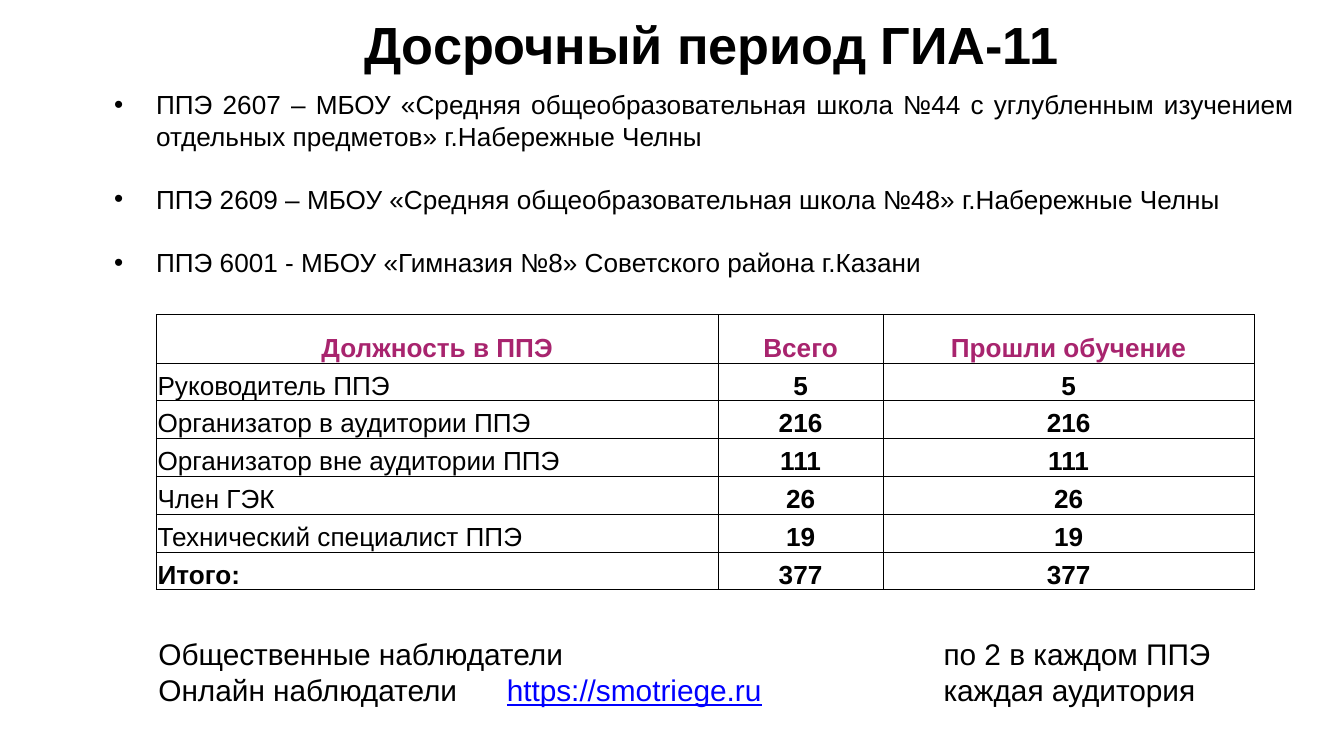
"""Build the slide on the early exam period with its sites, staff table and observers."""
from dataclasses import dataclass

from lxml import etree
from pptx import Presentation
from pptx.dml.color import RGBColor
from pptx.enum.text import MSO_ANCHOR, PP_ALIGN
from pptx.oxml.ns import qn
from pptx.slide import Slide
from pptx.text.text import TextFrame
from pptx.util import Pt

LEFT, CENTER, JUSTIFY = PP_ALIGN.LEFT, PP_ALIGN.CENTER, PP_ALIGN.JUSTIFY
BOTTOM = MSO_ANCHOR.BOTTOM


@dataclass(frozen=True)
class Theme:
    font: str = "Arial"
    text: RGBColor = RGBColor(0x00, 0x00, 0x00)
    header: RGBColor = RGBColor(0xA8, 0x24, 0x6E)
    link: RGBColor = RGBColor(0x00, 0x00, 0xFF)
    border: str = "000000"
    title_size: float = 28
    body_size: float = 14
    note_size: float = 16


@dataclass(frozen=True)
class Box:
    left: float
    top: float
    width: float
    height: float


@dataclass(frozen=True)
class StaffRow:
    position: str
    total: str
    trained: str


THEME = Theme()
TITLE_BOX = Box(48, 3, 666, 41)
SITES_BOX = Box(54, 44, 646.5, 108.5)
TABLE_BOX = Box(83.7, 168.5, 588.2, 147.6)
NOTES_BOX = Box(77.8, 337, 607, 46)

SITES = (
    "ППЭ 2607 – МБОУ «Средняя общеобразовательная школа №44 с углубленным изучением "
    "отдельных предметов» г.Набережные Челны",
    "ППЭ 2609 – МБОУ «Средняя общеобразовательная школа №48» г.Набережные Челны",
    "ППЭ 6001 - МБОУ «Гимназия №8» Советского района г.Казани",
)
SITE_INDENT = 22.5
SITE_GAP = 17

STAFF = (
    StaffRow("Должность в ППЭ", "Всего", "Прошли обучение"),
    StaffRow("Руководитель ППЭ", "5", "5"),
    StaffRow("Организатор в аудитории ППЭ", "216", "216"),
    StaffRow("Организатор вне аудитории ППЭ", "111", "111"),
    StaffRow("Член ГЭК", "26", "26"),
    StaffRow("Технический специалист ППЭ", "19", "19"),
    StaffRow("Итого:", "377", "377"),
)
COLUMN_WIDTHS = (301, 88.4, 198.8)
HEADER_HEIGHT = 26
CELL_MARGIN = 0.7
BORDER_WIDTH = 0.5

LINK = "https://smotriege.ru"
NOTES = (
    ("Общественные наблюдатели", "\tпо 2 в каждом ППЭ"),
    ("Онлайн наблюдатели\t", LINK, "\tкаждая аудитория"),
)
NOTE_TABS = (186.6, 420.6)


def add_text_frame(slide: Slide, box: Box) -> TextFrame:
    shape = slide.shapes.add_textbox(Pt(box.left), Pt(box.top), Pt(box.width), Pt(box.height))
    shape.text_frame.word_wrap = True
    return shape.text_frame


def next_paragraph(frame: TextFrame, index: int):
    return frame.add_paragraph() if index else frame.paragraphs[0]


def set_font(paragraph, size: float, color: RGBColor = THEME.text, bold: bool = False) -> None:
    font = paragraph.font
    font.name, font.size, font.bold = THEME.font, Pt(size), bold
    font.color.rgb = color


def add_title(slide: Slide) -> None:
    paragraph = add_text_frame(slide, TITLE_BOX).paragraphs[0]
    paragraph.text = "Досрочный период ГИА-11"
    paragraph.alignment = CENTER
    set_font(paragraph, THEME.title_size, bold=True)


def add_sites(slide: Slide) -> None:
    frame = add_text_frame(slide, SITES_BOX)
    for index, site in enumerate(SITES):
        paragraph = next_paragraph(frame, index)
        paragraph.text = site
        paragraph.alignment = JUSTIFY
        properties = paragraph._p.get_or_add_pPr()
        properties.set("marL", str(Pt(SITE_INDENT)))
        properties.set("indent", str(-Pt(SITE_INDENT)))
        etree.SubElement(properties, qn("a:buFont"), typeface=THEME.font)
        etree.SubElement(properties, qn("a:buChar"), char="•")
        if index:
            paragraph.space_before = Pt(SITE_GAP)
        set_font(paragraph, THEME.body_size)


def set_borders(cell) -> None:
    properties = cell._tc.get_or_add_tcPr()
    for position, side in enumerate(("lnL", "lnR", "lnT", "lnB")):
        line = etree.Element(qn(f"a:{side}"), w=str(Pt(BORDER_WIDTH)))
        fill = etree.SubElement(line, qn("a:solidFill"))
        etree.SubElement(fill, qn("a:srgbClr"), val=THEME.border)
        properties.insert(position, line)


def fill_cell(cell, text: str, alignment: PP_ALIGN, color: RGBColor, bold: bool) -> None:
    cell.fill.background()
    set_borders(cell)
    cell.vertical_anchor = BOTTOM
    cell.margin_left = cell.margin_right = cell.margin_top = Pt(CELL_MARGIN)
    cell.margin_bottom = Pt(0)
    paragraph = cell.text_frame.paragraphs[0]
    paragraph.text = text
    paragraph.alignment = alignment
    set_font(paragraph, THEME.body_size, color, bold)


def add_staff_table(slide: Slide) -> None:
    box = TABLE_BOX
    table = slide.shapes.add_table(
        len(STAFF), len(COLUMN_WIDTHS), Pt(box.left), Pt(box.top), Pt(box.width), Pt(box.height)
    ).table
    table.first_row = table.horz_banding = False
    for column, width in zip(table.columns, COLUMN_WIDTHS):
        column.width = Pt(width)
    last = len(STAFF) - 1
    row_height = (box.height - HEADER_HEIGHT) / last
    for row, staff in enumerate(STAFF):
        table.rows[row].height = Pt(row_height if row else HEADER_HEIGHT)
        color = THEME.text if row else THEME.header
        for column, text in enumerate((staff.position, staff.total, staff.trained)):
            is_label = column == 0 and row > 0
            bold = not is_label or row == last
            fill_cell(table.cell(row, column), text, LEFT if is_label else CENTER, color, bold)


def add_notes(slide: Slide) -> None:
    frame = add_text_frame(slide, NOTES_BOX)
    for index, parts in enumerate(NOTES):
        paragraph = next_paragraph(frame, index)
        tabs = etree.SubElement(paragraph._p.get_or_add_pPr(), qn("a:tabLst"))
        for stop in NOTE_TABS:
            etree.SubElement(tabs, qn("a:tab"), pos=str(Pt(stop)), algn="l")
        set_font(paragraph, THEME.note_size)
        for part in parts:
            run = paragraph.add_run()
            run.text = part
            if part == LINK:
                run.font.color.rgb = THEME.link
                run.font.underline = True


def main() -> None:
    presentation = Presentation()
    presentation.slide_width, presentation.slide_height = Pt(720), Pt(405)
    slide = presentation.slides.add_slide(presentation.slide_layouts[6])
    add_title(slide)
    add_sites(slide)
    add_notes(slide)
    add_staff_table(slide)
    presentation.save("out.pptx")


if __name__ == "__main__":
    main()
